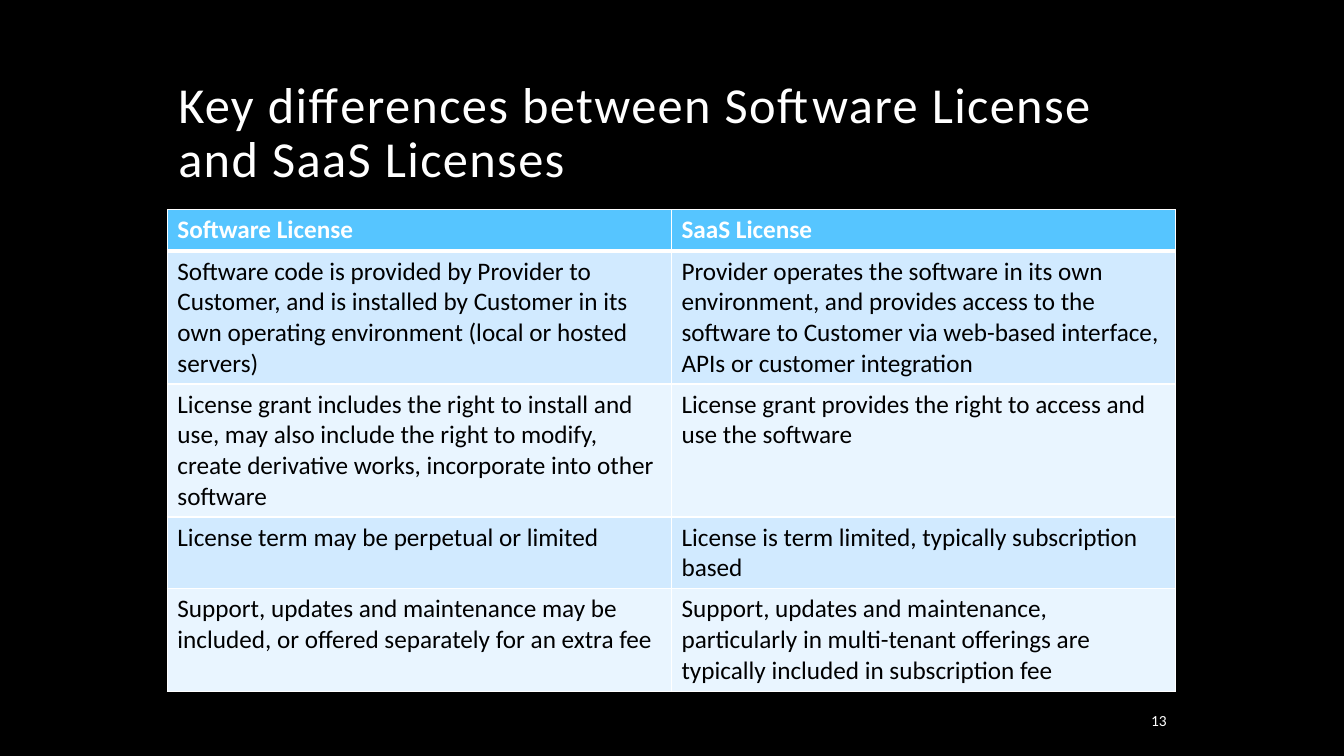
"""Build a slide comparing software licenses with SaaS licenses."""
from lxml.etree import SubElement
from pptx import Presentation
from pptx.dml.color import RGBColor
from pptx.enum.text import MSO_ANCHOR, PP_ALIGN
from pptx.oxml.ns import qn
from pptx.util import Inches, Pt

TITLE = "Key differences between Software License and SaaS Licenses"
NUMBER = "13"
ROWS = [
    ("Software License", "SaaS License"),
    ("Software code is provided by Provider to Customer, and is installed by "
     "Customer in its own operating environment (local or hosted servers)",
     "Provider operates the software in its own environment, and provides access "
     "to the software to Customer via web-based interface, APIs or customer integration"),
    ("License grant includes the right to install and use, may also include the "
     "right to modify, create derivative works, incorporate into other software",
     "License grant provides the right to access and use the software"),
    ("License term may be perpetual or limited",
     "License is term limited, typically subscription based"),
    ("Support, updates and maintenance may be included, or offered separately "
     "for an extra fee",
     "Support, updates and maintenance, particularly in multi-tenant offerings "
     "are typically included in subscription fee"),
]
HEIGHTS = [0.41, 1.32, 1.32, 0.71, 1.02]
COLORS = {"back": "000000", "light": "FFFFFF", "dark": "000000",
          "head": "56C5FF", "odd": "D1EAFF", "even": "E9F5FF"}
FONT = "Calibri"


def color(name):
    return RGBColor.from_string(COLORS[name])


def style(para, size, tone, bold=False):
    for run in para.runs:
        font = run.font
        font.name, font.size, font.bold = FONT, Pt(size), bold
        font.color.rgb = color(tone)


def add_text(slide, box, text, size, anchor):
    frame = slide.shapes.add_textbox(*map(Inches, box)).text_frame
    frame.word_wrap = True
    frame.vertical_anchor = anchor
    frame.text = text
    para = frame.paragraphs[0]
    style(para, size, "light")
    return para


def add_border(cell, side, width):
    props = cell._tc.get_or_add_tcPr()
    line = SubElement(props, qn(f"a:ln{side}"), w=str(Pt(width)))
    fill = SubElement(line, qn("a:solidFill"))
    SubElement(fill, qn("a:srgbClr"), val=COLORS["light"])


def fill_cell(cell, text, row):
    cell.text = text
    head = row == 0
    style(cell.text_frame.paragraphs[0], 18, "light" if head else "dark", head)
    widths = {"L": 1, "R": 1, "T": 3 if row == 1 else 1, "B": 3 if head else 1}
    for side, width in widths.items():
        add_border(cell, side, width)
    cell.fill.solid()
    cell.fill.fore_color.rgb = color("head" if head else "odd" if row % 2 else "even")


def add_grid(slide):
    frame = slide.shapes.add_table(len(ROWS), 2, Inches(1.66), Inches(2.08),
                                   Inches(10), Inches(sum(HEIGHTS)))
    table = frame.table
    for row, (texts, height) in enumerate(zip(ROWS, HEIGHTS)):
        table.rows[row].height = Inches(height)
        for col, text in enumerate(texts):
            fill_cell(table.cell(row, col), text, row)


def main():
    deck = Presentation()
    deck.slide_width, deck.slide_height = Inches(13.33), Inches(7.5)
    slide = deck.slides.add_slide(deck.slide_layouts[6])
    slide.background.fill.solid()
    slide.background.fill.fore_color.rgb = color("back")

    title = add_text(slide, (1.67, 0.42, 10, 1.5), TITLE, 36, MSO_ANCHOR.BOTTOM)
    title.line_spacing = 0.9
    title.runs[0].font._element.set("spc", "100")
    add_grid(slide)
    page = add_text(slide, (10.75, 7, 0.92, 0.3), NUMBER, 11, MSO_ANCHOR.MIDDLE)
    page.alignment = PP_ALIGN.RIGHT
    deck.save("out.pptx")


if __name__ == "__main__":
    main()
